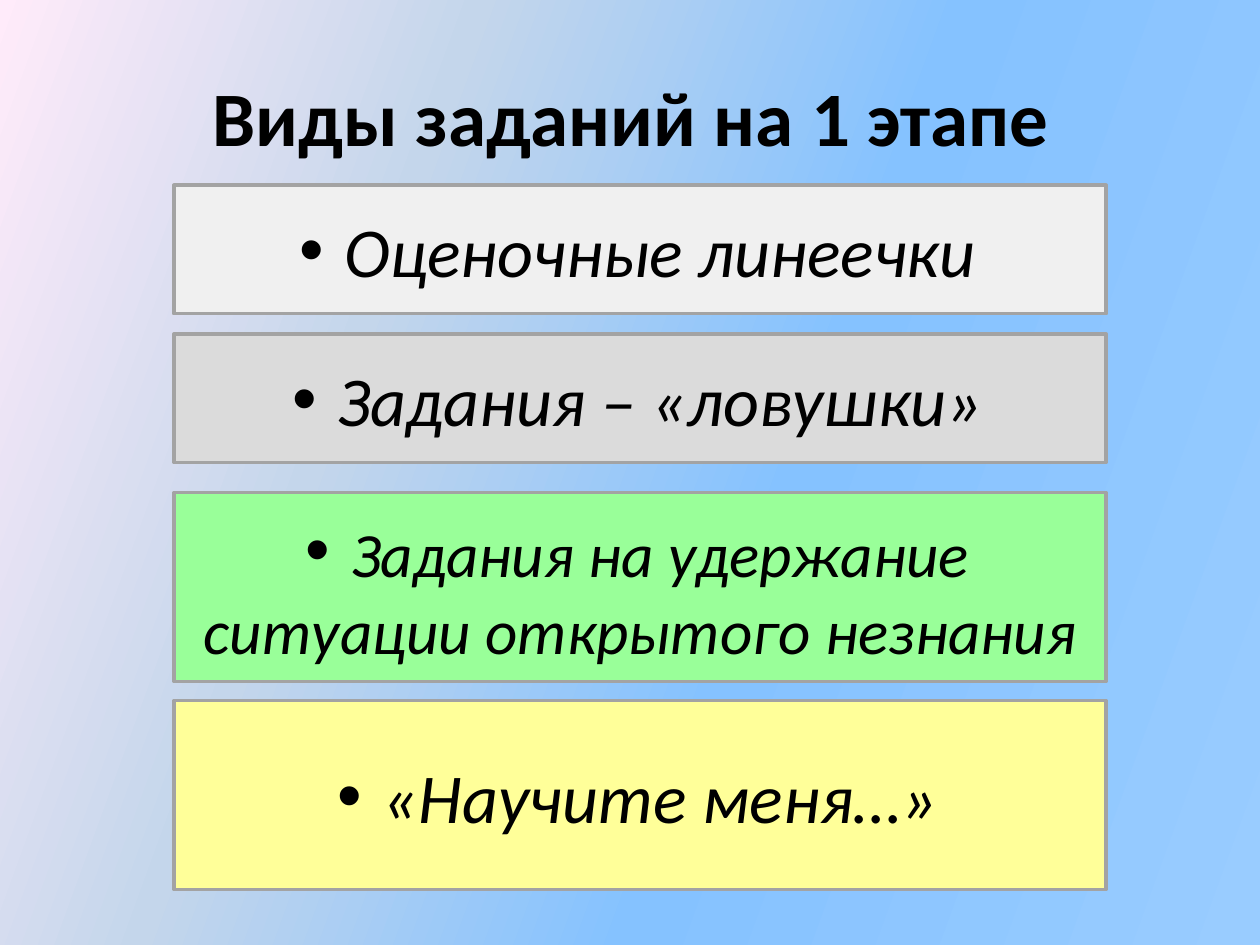
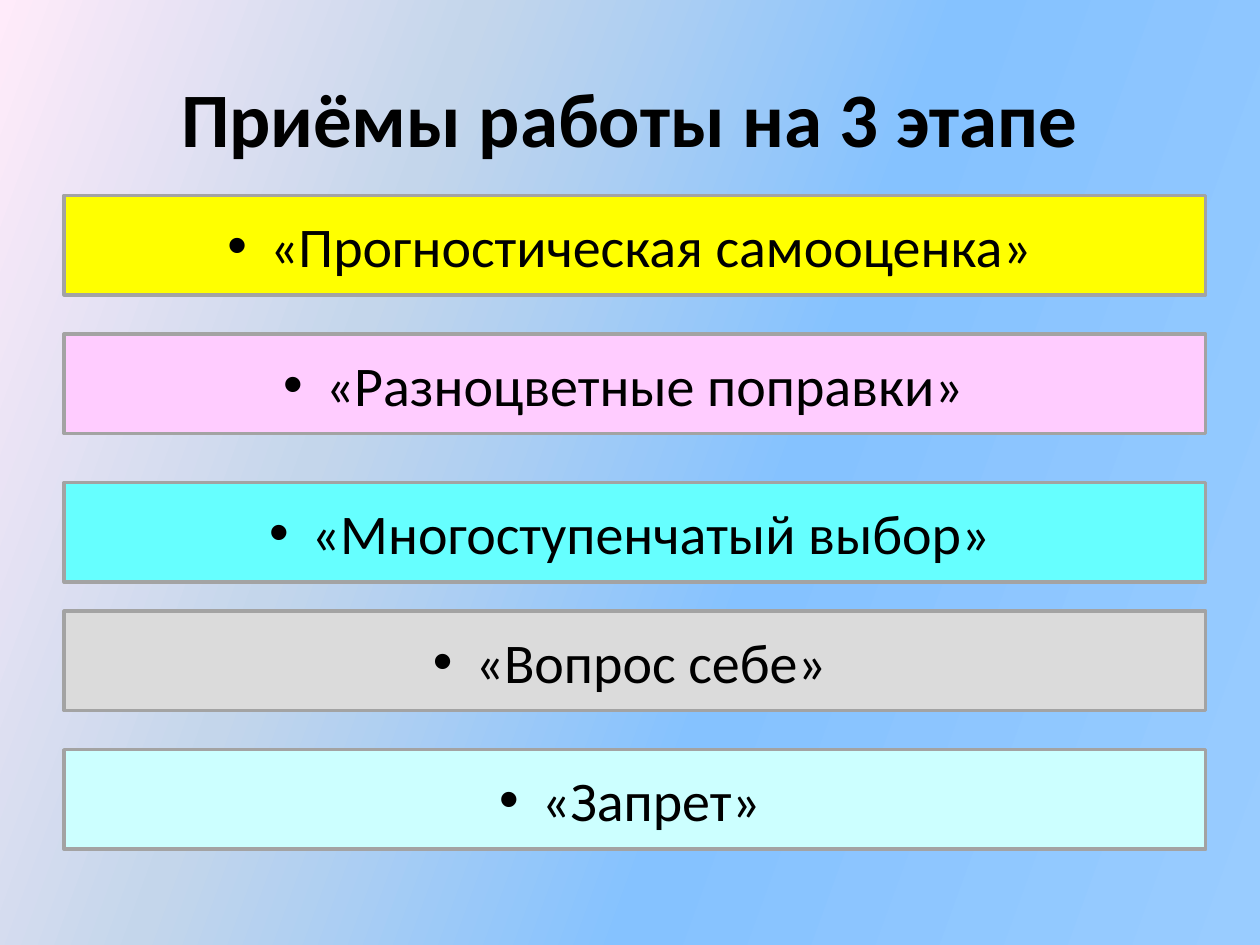
import pptx
import pptx.dml.color
import pptx.enum.shapes
import pptx.enum.text
import pptx.oxml
import pptx.oxml.ns
import pptx.util
from lxml import etree

Inches = pptx.util.Inches
FONT = "Calibri"
BLACK = "000000"
BORDER = "A3A3A3"
BACKDROP_STOPS = [(0, "99CCFF"), (40, "85C2FF"), (70, "C4D6EB"), (100, "FFEBFA")]

# Each card: top, height, fill, text, text size
TASK_CARDS = [
    (1.47, 1.02, "F0F0F0", "Оценочные линеечки", 40),
    (2.65, 1.02, "DBDBDB", "Задания – «ловушки»", 40),
    (3.91, 1.5, "99FF99", "Задания на удержание ситуации открытого незнания", 36),
    (5.56, 1.5, "FFFF99", "«Научите меня…»", 40),
]
TECHNIQUE_CARDS = [
    (1.55, 0.79, "FFFF00", "«Прогностическая самооценка»", 32),
    (2.65, 0.79, "FFCCFF", "«Разноцветные поправки» ", 32),
    (3.83, 0.79, "66FFFF", "«Многоступенчатый выбор»", 32),
    (4.85, 0.79, "DBDBDB", "«Вопрос себе»", 32),
    (5.95, 0.79, "CCFFFF", "«Запрет»", 32),
]


def rgb(value):
    return pptx.dml.color.RGBColor.from_string(value)


def add_xml(parent, tag, **attributes):
    return etree.SubElement(parent, pptx.oxml.ns.qn(tag), attributes)


def paint_backdrop(master):
    fill = master.background.fill
    fill.gradient()
    fill.gradient_angle = 160
    stops = master.element.xpath(".//p:bgPr/a:gradFill/a:gsLst")[0]
    for stop in list(stops):
        stops.remove(stop)
    for percent, color in BACKDROP_STOPS:
        stop = add_xml(stops, "a:gs", pos=str(percent * 1000))
        add_xml(stop, "a:srgbClr", val=color)


def write_text(box, text, size, bold=False, italic=False, bullet_size=None):
    """Centre the text in the box; bullet_size puts a bullet and a gap before it."""
    frame = box.text_frame
    frame.word_wrap = True
    frame.vertical_anchor = pptx.enum.text.MSO_ANCHOR.MIDDLE
    para = frame.paragraphs[0]
    para.alignment = pptx.enum.text.PP_ALIGN.CENTER
    pieces = [(text, size)]
    if bullet_size:
        settings = para._p.get_or_add_pPr()
        add_xml(settings, "a:buFont", typeface="Arial")
        add_xml(settings, "a:buChar", char="•")
        pieces.insert(0, (" ", bullet_size))
    for piece, points in pieces:
        span = para.add_run()
        span.text = piece
        span.font.name = FONT
        span.font.size = pptx.util.Pt(points)
        span.font.bold = bold
        span.font.italic = italic
        span.font.color.rgb = rgb(BLACK)


def add_title(page, text, left, top):
    box = page.shapes.add_textbox(Inches(left), Inches(top), Inches(9), Inches(1.25))
    write_text(box, text, 44, bold=True)


def add_card(page, left, top, width, height, color):
    card = page.shapes.add_shape(
        pptx.enum.shapes.MSO_SHAPE.RECTANGLE,
        Inches(left), Inches(top), Inches(width), Inches(height))
    card.shadow.inherit = False
    card.fill.solid()
    card.fill.fore_color.rgb = rgb(color)
    card.line.color.rgb = rgb(BORDER)
    card.line.width = pptx.util.Pt(2)
    return card


def add_card_page(deck, title, title_at, cards, left, width, italic=False):
    page = deck.slides.add_slide(deck.slide_layouts[6])
    bullet_size = max(card[-1] for card in cards)
    for top, height, color, text, size in cards:
        card = add_card(page, left, top, width, height, color)
        write_text(card, text, size, italic=italic, bullet_size=bullet_size)
    add_title(page, title, *title_at)


def main():
    deck = pptx.Presentation()
    deck.slide_width, deck.slide_height = Inches(10), Inches(7.5)
    paint_backdrop(deck.slide_master)
    add_card_page(deck, "Виды заданий на 1 этапе", (0.51, 0.29),
                  TASK_CARDS, left=1.38, width=7.4, italic=True)
    add_card_page(deck, "Приёмы работы на 3 этапе", (0.5, 0.3),
                  TECHNIQUE_CARDS, left=0.51, width=9.06)
    deck.save("out.pptx")


if __name__ == "__main__":
    main()
